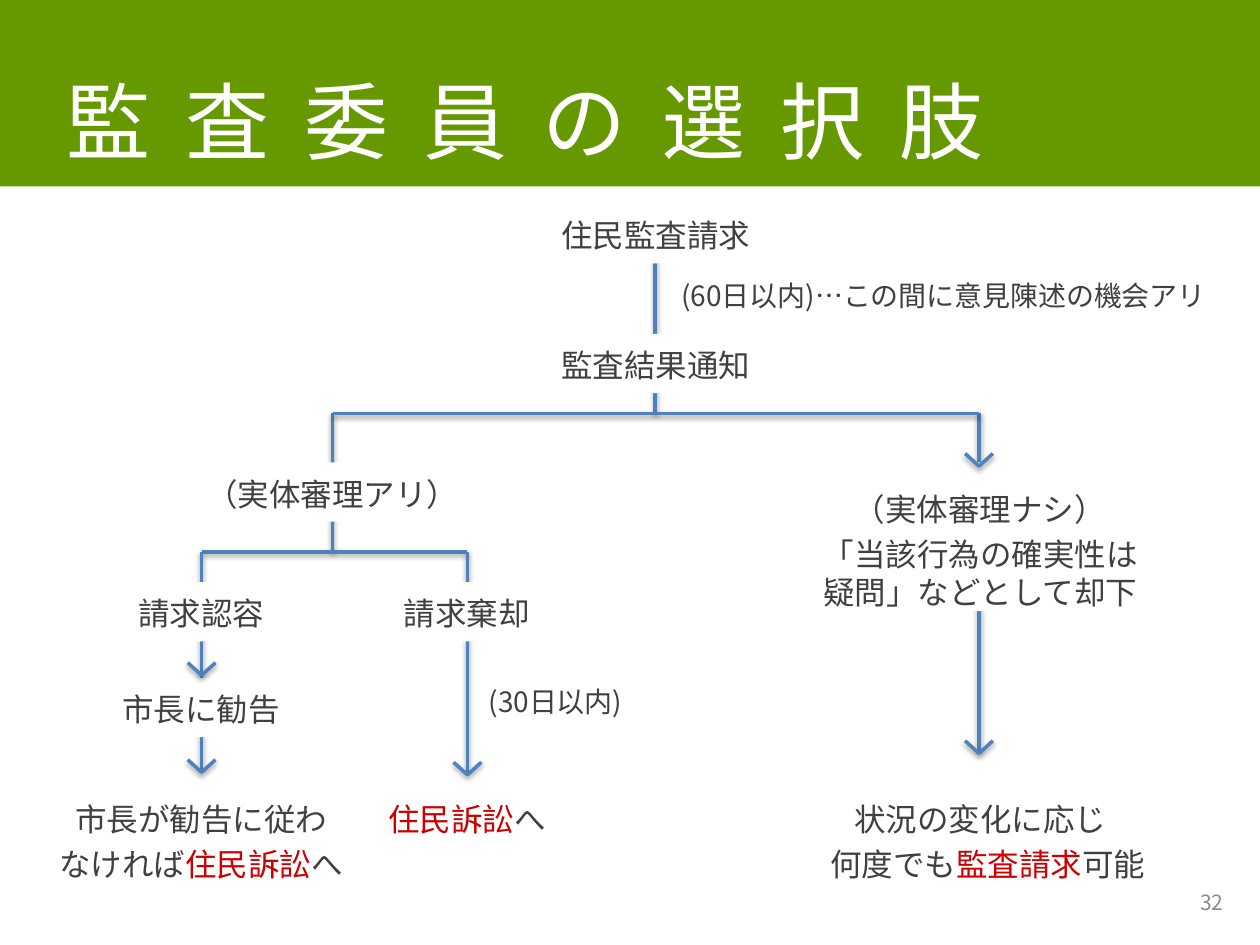
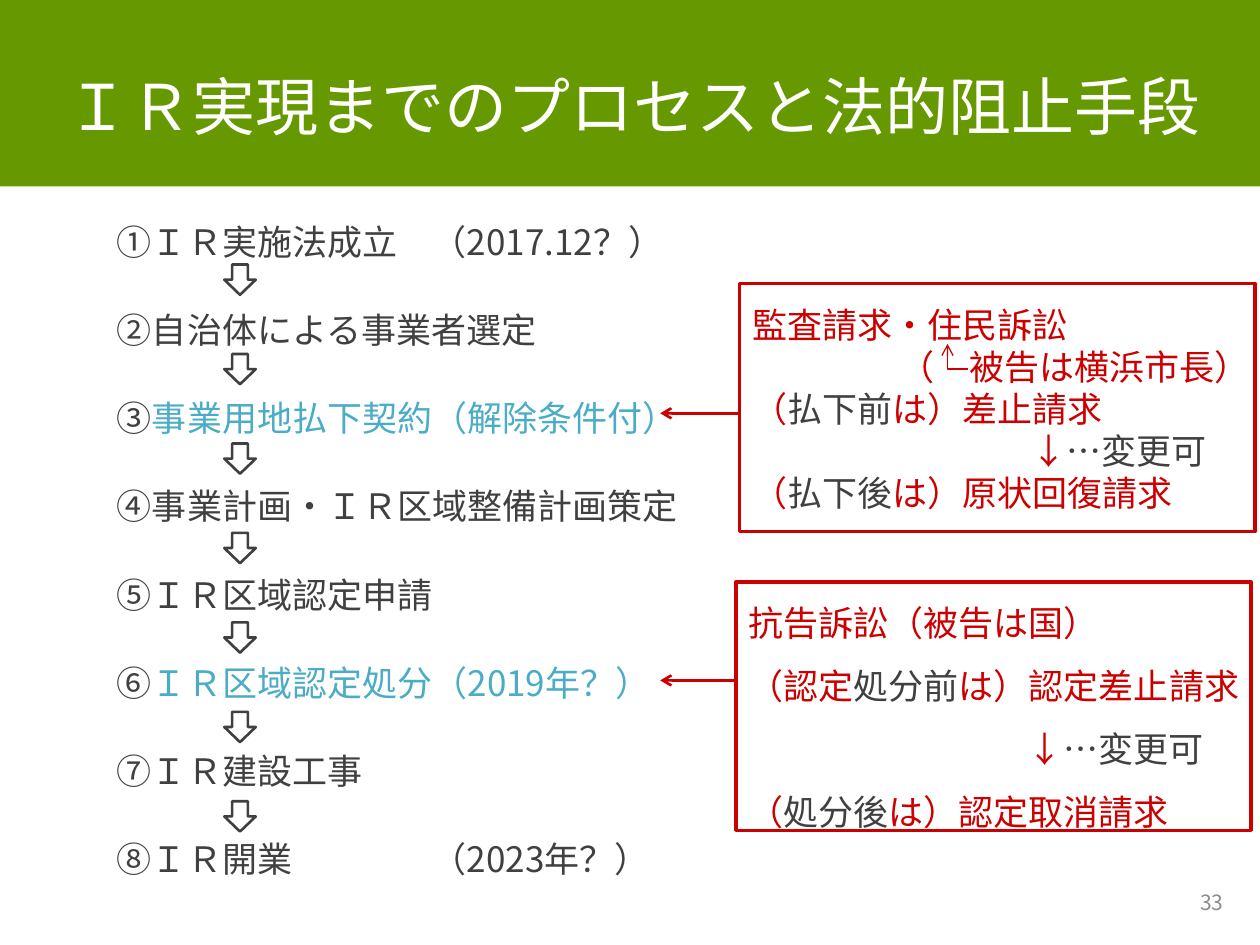
"""Build two slides on resident audit requests and the IR approval process."""
from lxml.etree import SubElement
from pptx import Presentation
from pptx.dml.color import RGBColor
from pptx.enum.shapes import MSO_CONNECTOR, MSO_SHAPE
from pptx.enum.text import MSO_ANCHOR, PP_ALIGN
from pptx.oxml.ns import qn
from pptx.util import Inches, Pt

FONT = "Noto Sans CJK JP"
WHITE = RGBColor(0xFF, 0xFF, 0xFF)
GREEN = RGBColor(0x66, 0x99, 0x00)
BLUE = RGBColor(0x4F, 0x81, 0xBD)
TEAL = RGBColor(0x4B, 0xAC, 0xC6)
RED = RGBColor(0xCC, 0x00, 0x00)
DARK = RGBColor(0x40, 0x40, 0x40)
GREY = RGBColor(0x8C, 0x8C, 0x8C)

TRUNK_X, HEARD_X, ACCEPTED_X, REJECTED_X, UNHEARD_X = 5.2, 2.64, 1.6, 3.71, 7.77
FORK_Y, RULING_Y = 3.28, 4.38
FLOW_LINES = [
    (TRUNK_X, 1.82, TRUNK_X, FORK_Y),
    (HEARD_X, FORK_Y, HEARD_X, RULING_Y),
    (REJECTED_X, RULING_Y, ACCEPTED_X, RULING_Y),
    (UNHEARD_X, FORK_Y, UNHEARD_X, 5.96),
    (UNHEARD_X, FORK_Y, HEARD_X, FORK_Y),
    (REJECTED_X, RULING_Y, REJECTED_X, 6.15),
    (ACCEPTED_X, RULING_Y, ACCEPTED_X, 6.15),
]
ARROW_TIPS = [(ACCEPTED_X, 5.36), (ACCEPTED_X, 6.13), (REJECTED_X, 6.15),
              (UNHEARD_X, 5.98), (UNHEARD_X, 3.7)]
FLOW_BOXES = [
    ("住民監査請求", 4.18, 1.62, 2.05, 0.47),
    ("監査結果通知", 4.18, 2.65, 2.05, 0.47),
    ("（実体審理アリ）", 1.39, 3.67, 2.49, 0.47),
    ("（実体審理ナシ）", 6.53, 3.67, 2.49, 0.71),
    ("状況の変化に応じ", 6.23, 6.13, 3.1, 0.71),
    ("|住民訴訟|へ", 2.46, 6.13, 2.49, 0.71),
    ("請求棄却", 2.46, 4.62, 2.49, 0.47),
    ("請求認容", 0.35, 4.62, 2.49, 0.47),
    ("市長に勧告", 0.35, 5.38, 2.49, 0.47),
    ("市長が勧告に従わ", 0.35, 6.13, 2.49, 0.71),
]
SECOND_LINES = [
    ("「当該行為の確実性は\v疑問」などとして却下", 6.23, 4.2, 3.1, 0.65),
    ("何度でも|監査請求|可能", 6.29, 6.66, 3.1, 0.71),
    ("なければ|住民訴訟|へ", 0.35, 6.66, 2.49, 0.71),
]
TIME_LIMITS = [
    ("(60日以内)…この間に意見陳述の機会アリ", 5.31, 2.1, 4.68, 0.47),
    ("(30日以内)", 3.78, 5.32, 1.42, 0.47),
]

STEPS = [
    "①ＩＲ実施法成立\t（2017.12？）",
    "②自治体による事業者選定",
    "③|事業用地払下契約（解除条件付）",
    "④事業計画・ＩＲ区域整備計画策定",
    "⑤ＩＲ区域認定申請",
    "⑥|ＩＲ区域認定処分（2019年？）",
    "⑦ＩＲ建設工事",
    "⑧ＩＲ開業\t（2023年？）",
]
DATE_TAB = 2.5
REMEDIES = [
    {"left": 5.87, "top": 2.25, "arrow": 3.28, "leading": 1.2, "lines": [
        ("監査請求・住民訴訟", 0),
        ("（　被告は横浜市長）", 1.17),
        ("（|払下前|は）差止請求", 0),
        ("↓|…変更可", 2.22),
        ("（|払下後|は）原状回復請求", 0)]},
    {"left": 5.84, "top": 4.62, "arrow": 5.4, "leading": 1.8, "lines": [
        ("抗告訴訟（被告は国）", 0),
        ("（認定|処分前|は）認定差止請求", 0),
        ("↓|…変更可", 2.22),
        ("（|処分後|は）認定取消請求", 0)]},
]


def write(shape, lines, size, colors, align=PP_ALIGN.LEFT, anchor=MSO_ANCHOR.MIDDLE,
          leading=1.29, gap=0, tab=None, tracking=None):
    """Write (text, indent) lines; a bar in the text switches between two colours."""
    frame = shape.text_frame
    frame.word_wrap = True
    frame.vertical_anchor = anchor
    for index, (text, indent) in enumerate(lines):
        para = frame.paragraphs[0] if index == 0 else frame.add_paragraph()
        para.alignment = align
        para.line_spacing = Pt(size * leading)
        para.space_after = Pt(gap)
        properties = para._p.get_or_add_pPr()
        if indent:
            properties.set("marL", str(Inches(indent)))
        if tab:
            stops = SubElement(properties, qn("a:tabLst"))
            SubElement(stops, qn("a:tab"), pos=str(Inches(tab)), algn="l")
        for part, words in enumerate(text.split("|")):
            for row, piece in enumerate(words.split("\v")):
                if row:
                    para.add_line_break()
                if piece:
                    span = para.add_run()
                    span.text = piece
                    span.font.size = Pt(size)
                    span.font.color.rgb = colors[part % 2]
                    span.font.name = FONT
                    run_properties = span._r.get_or_add_rPr()
                    SubElement(run_properties, qn("a:ea"), typeface=FONT)
                    if tracking:
                        run_properties.set("spc", str(tracking * 100))


def add_text(page, place, lines, size, colors, **options):
    box = page.shapes.add_textbox(*map(Inches, place))
    write(box, lines, size, colors, **options)


def add_block(page, place, fill=None, line=None, width=2, kind=MSO_SHAPE.RECTANGLE):
    block = page.shapes.add_shape(kind, *map(Inches, place))
    block.shadow.inherit = False
    if fill is None:
        block.fill.background()
    else:
        block.fill.solid()
        block.fill.fore_color.rgb = fill
    if line is None:
        block.line.fill.background()
    else:
        block.line.color.rgb = line
        block.line.width = Pt(width)
    return block


def style_stroke(stroke, color, width, shadow=False, arrow=False):
    stroke.line.color.rgb = color
    stroke.line.width = Pt(width)
    if arrow:
        SubElement(stroke.line._get_or_add_ln(), qn("a:tailEnd"), type="arrow")
    effects = SubElement(stroke._element.spPr, qn("a:effectLst"))
    if shadow:
        outer = SubElement(effects, qn("a:outerShdw"), blurRad=str(Pt(3.1)),
                           dist=str(Pt(1.6)), dir="5400000", rotWithShape="0")
        black = SubElement(outer, qn("a:srgbClr"), val="000000")
        SubElement(black, qn("a:alpha"), val="38000")


def add_line(page, ends, color, width, **options):
    line = page.shapes.add_connector(MSO_CONNECTOR.STRAIGHT, *map(Inches, ends))
    style_stroke(line, color, width, **options)


def add_polyline(page, points, color, width, **options):
    corners = [(Inches(x), Inches(y)) for x, y in points]
    builder = page.shapes.build_freeform(*corners[0])
    builder.add_line_segments(corners[1:], close=False)
    polyline = builder.convert_to_shape()
    polyline.fill.background()
    style_stroke(polyline, color, width, **options)


def add_page(deck, title, size, number, width, tracking=None):
    page = deck.slides.add_slide(deck.slide_layouts[6])
    add_text(page, (7.48, 6.95, 2.33, 0.4), [(number, 0)], 12, (GREY, GREY),
             align=PP_ALIGN.RIGHT)
    add_block(page, (-0.04, 0, 10.04, 1.48), GREEN)
    add_text(page, (0.43, 0.44, width, 0.71), [(title, 0)], size, (WHITE, WHITE),
             anchor=MSO_ANCHOR.TOP, tracking=tracking)
    return page


def add_flow_boxes(page, boxes, size, **options):
    for text, *place in boxes:
        write(add_block(page, place, WHITE), [(text, 0)], size, (DARK, RED), **options)


def build_choices(deck):
    page = add_page(deck, "監査委員の選択肢", 48, "32", 7.88, tracking=20)
    for ends in FLOW_LINES:
        add_line(page, ends, BLUE, 2, shadow=True)
    add_flow_boxes(page, FLOW_BOXES, 18, align=PP_ALIGN.CENTER)
    add_flow_boxes(page, SECOND_LINES, 18, align=PP_ALIGN.CENTER,
                   anchor=MSO_ANCHOR.TOP, leading=1.2)
    add_flow_boxes(page, TIME_LIMITS, 16)
    for x, y in ARROW_TIPS:
        chevron = [(x - 0.11, y - 0.1), (x, y), (x + 0.11, y - 0.1)]
        add_polyline(page, chevron, BLUE, 2, shadow=True)


def build_process(deck):
    page = add_page(deck, "ＩＲ実現までのプロセスと法的阻止手段", 36, "33", 10)
    add_text(page, (0.83, 1.7, 4.96, 5.67), [(step, 0) for step in STEPS], 20,
             (DARK, TEAL), anchor=MSO_ANCHOR.TOP, leading=1.2, gap=26.4, tab=DATE_TAB)
    for index in range(len(STEPS) - 1):
        add_block(page, (1.78, 2.1 + index * 0.71, 0.25, 0.24), WHITE, DARK, 1.5,
                  MSO_SHAPE.DOWN_ARROW)
    for remedy in REMEDIES:
        left, top, arrow = remedy["left"], remedy["top"], remedy["arrow"]
        add_block(page, (left, top, 4.09, 1.97), line=RED)
        add_text(page, (left, top + 0.24, 4.29, 1.5), remedy["lines"], 20, (RED, DARK),
                 leading=remedy["leading"])
        add_line(page, (left, arrow, 5.24, arrow), RED, 1.5, arrow=True)
    add_polyline(page, [(7.68, 2.93), (7.52, 2.93), (7.52, 2.73)], RED, 0.75, arrow=True)


def main():
    deck = Presentation()
    deck.slide_width, deck.slide_height = Inches(10), Inches(7.5)
    build_choices(deck)
    build_process(deck)
    deck.save("out.pptx")


if __name__ == "__main__":
    main()
